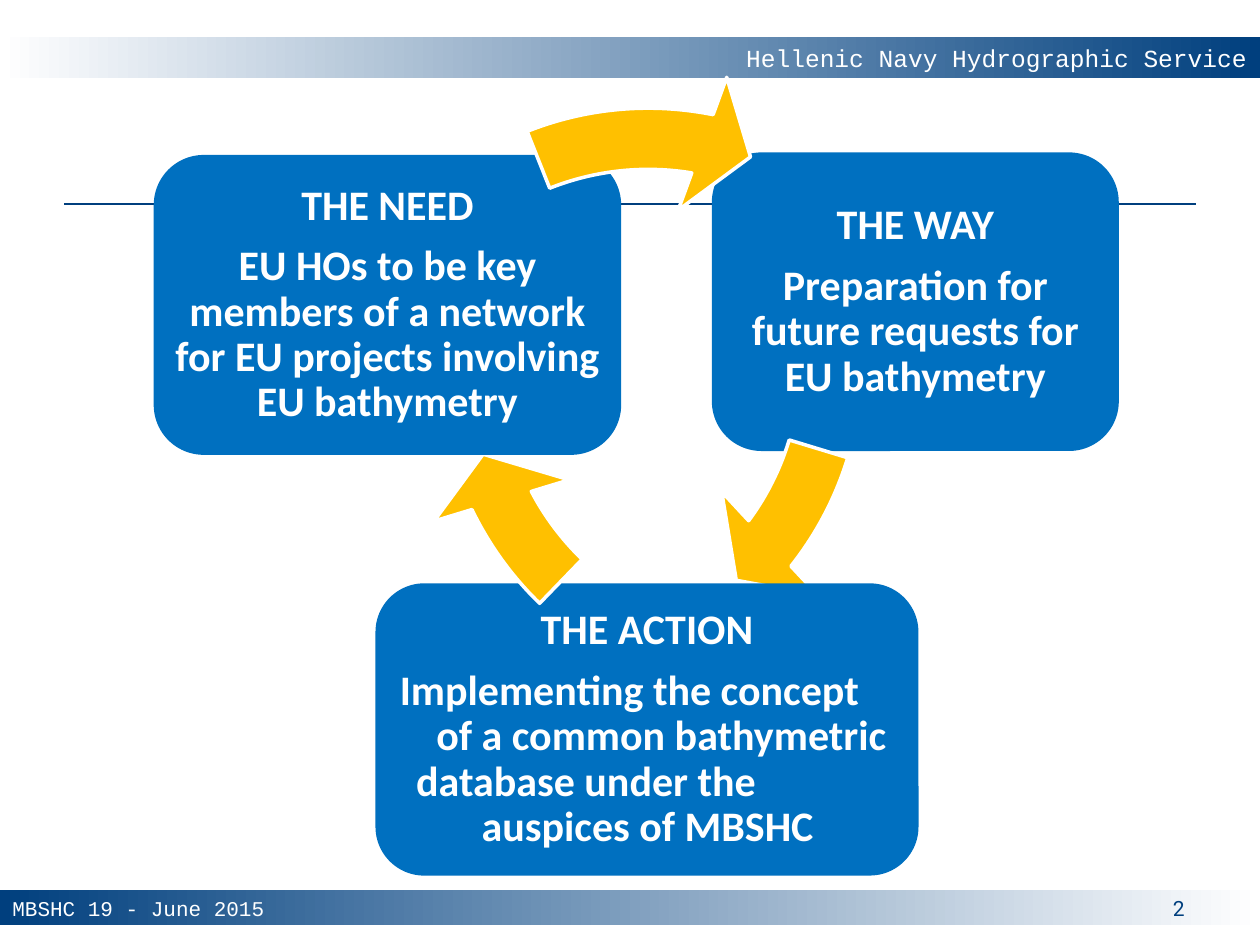
"""Build the slide showing the cycle of need, way and action."""
from lxml import etree
from pptx import Presentation, util as u
from pptx.dml.color import RGBColor
from pptx.enum import shapes, text
from pptx.oxml.ns import qn

COLORS = {"navy": "003F7E", "white": "FFFFFF", "blue": "0070C0", "gold": "FFC000"}
WIDTH, HEIGHT = u.Inches(10), u.Inches(7.5)
KIND = shapes.MSO_SHAPE
ALIGN = text.PP_ALIGN
ANCHOR = text.MSO_ANCHOR


def color(name):
    """Return the named colour."""
    return RGBColor.from_string(COLORS[name])


def place(left, top, width, height):
    """Turn percentages of the slide's size into lengths."""
    return [round(size * share / 100) for size, share in
            zip((WIDTH, HEIGHT) * 2, (left, top, width, height))]


def add_shape(page, kind, area, fill=None):
    """Add a flat shape without outline."""
    shape = page.shapes.add_shape(kind, *place(*area))
    shape.shadow.inherit = False
    shape.line.fill.background()
    if fill:
        shape.fill.solid()
        shape.fill.fore_color.rgb = color(fill)
    return shape


def add_band(page, area, start, end):
    """Add a band that fades from left to right."""
    band = add_shape(page, KIND.RECTANGLE, area)
    band.fill.gradient()
    band.fill.gradient_angle = 0
    for stop, name, position in zip(band.fill.gradient_stops, (start, end), (0, 1)):
        stop.color.rgb = color(name)
        stop.position = position
    return band


def add_text(para, words, font, size, ink, bold=False):
    """Add one formatted run to a paragraph."""
    span = para.add_run()
    span.text = words
    span.font.name, span.font.size, span.font.bold = font, u.Pt(size), bold
    span.font.color.rgb = color(ink)


def add_label(page, area, words, font, ink, align):
    """Add a one-line text box for the footer."""
    box = page.shapes.add_textbox(*place(*area))
    box.text_frame.word_wrap = True
    para = box.text_frame.paragraphs[0]
    para.alignment = align
    add_text(para, words, font, 12, ink)


def add_rule(page, left, right, top):
    """Add the thin line across the page."""
    x1, y1, x2, y2 = place(left, top, right, top)
    rule = page.shapes.add_connector(shapes.MSO_CONNECTOR.STRAIGHT, x1, y1, x2, y2)
    rule.line.color.rgb = color("navy")
    rule.line.width = u.Pt(0.75)
    etree.SubElement(rule._element.spPr, qn("a:effectLst"))


def add_step(page, area, heading, lines):
    """Add a rounded step; each line has its indent in inches, or None to centre."""
    frame = add_shape(page, KIND.ROUNDED_RECTANGLE, area, "blue").text_frame
    frame.word_wrap = True
    frame.vertical_anchor = ANCHOR.MIDDLE
    frame.margin_left = frame.margin_right = u.Inches(0.03)
    frame.margin_top = frame.margin_bottom = u.Inches(0.03)
    for index, (words, indent) in enumerate([(heading, None)] + lines):
        para = frame.paragraphs[0] if index == 0 else frame.add_paragraph()
        para.alignment = ALIGN.CENTER if indent is None else ALIGN.LEFT
        para.line_spacing = 0.9
        para.space_after = u.Pt(0 if index else 8.8)
        if indent is not None:
            para._p.get_or_add_pPr().set("marL", str(u.Inches(indent)))
        add_text(para, words, "Calibri", 24, "white", True)


def add_arrow(page, left, top, start, end):
    """Add an arc arrow running between two angles in degrees."""
    arrow = add_shape(page, KIND.CIRCULAR_ARROW, (left, top, 58.5, 78), "gold")
    arrow.line.color.rgb = color("white")
    arrow.line.width = u.Pt(2)
    values = (8.3 / 100, 5.76, end * 0.6, start * 0.6, 9.6 / 100)
    for index, value in enumerate(values):
        arrow.adjustments[index] = value


def main():
    """Build and save the deck."""
    deck = Presentation()
    deck.slide_width, deck.slide_height = WIDTH, HEIGHT
    page = deck.slides.add_slide(deck.slide_layouts[6])

    add_band(page, (0, 94.13, 100, 3.73), "navy", "white")
    header = add_band(page, (0, 3.87, 100, 4.4), "white", "navy").text_frame
    header.vertical_anchor = ANCHOR.MIDDLE
    header.paragraphs[0].alignment = ALIGN.RIGHT
    add_text(header.paragraphs[0], "Hellenic Navy Hydrographic Service",
             "Courier New", 14, "white")
    add_rule(page, 5.1, 94.9, 21.6)
    add_label(page, (71.7, 94.13, 23.3, 3.2), "2", "Roboto", "navy", ALIGN.RIGHT)
    add_label(page, (0, 94.13, 31.7, 3.73), "MBSHC 19 - June 2015",
              "Courier New", "white", ALIGN.LEFT)

    add_step(page, (56.5, 16.13, 32.3, 31.6), "THE WAY",
             [("Preparation for future requests for EU bathymetry", None)])
    add_arrow(page, 13.1, -0.67, 16.92, 37.5)
    add_step(page, (29.8, 61.73, 43.1, 30.93), "THE ACTION",
             [("Implementing the concept", 0.05),
              ("of a common bathymetric", 0.34),
              ("database under the", 0.18),
              ("auspices of MBSHC", 0.7)])
    add_arrow(page, 31.7, -0.13, 134.05, 153.43)
    add_step(page, (12.2, 16.4, 37.1, 31.73), "THE NEED",
             [("EU HOs to be key members of a network for EU projects "
               "involving EU bathymetry", None)])
    add_arrow(page, 22.2, 7.2, 248.35, 280.48)

    deck.save("out.pptx")


if __name__ == "__main__":
    main()
